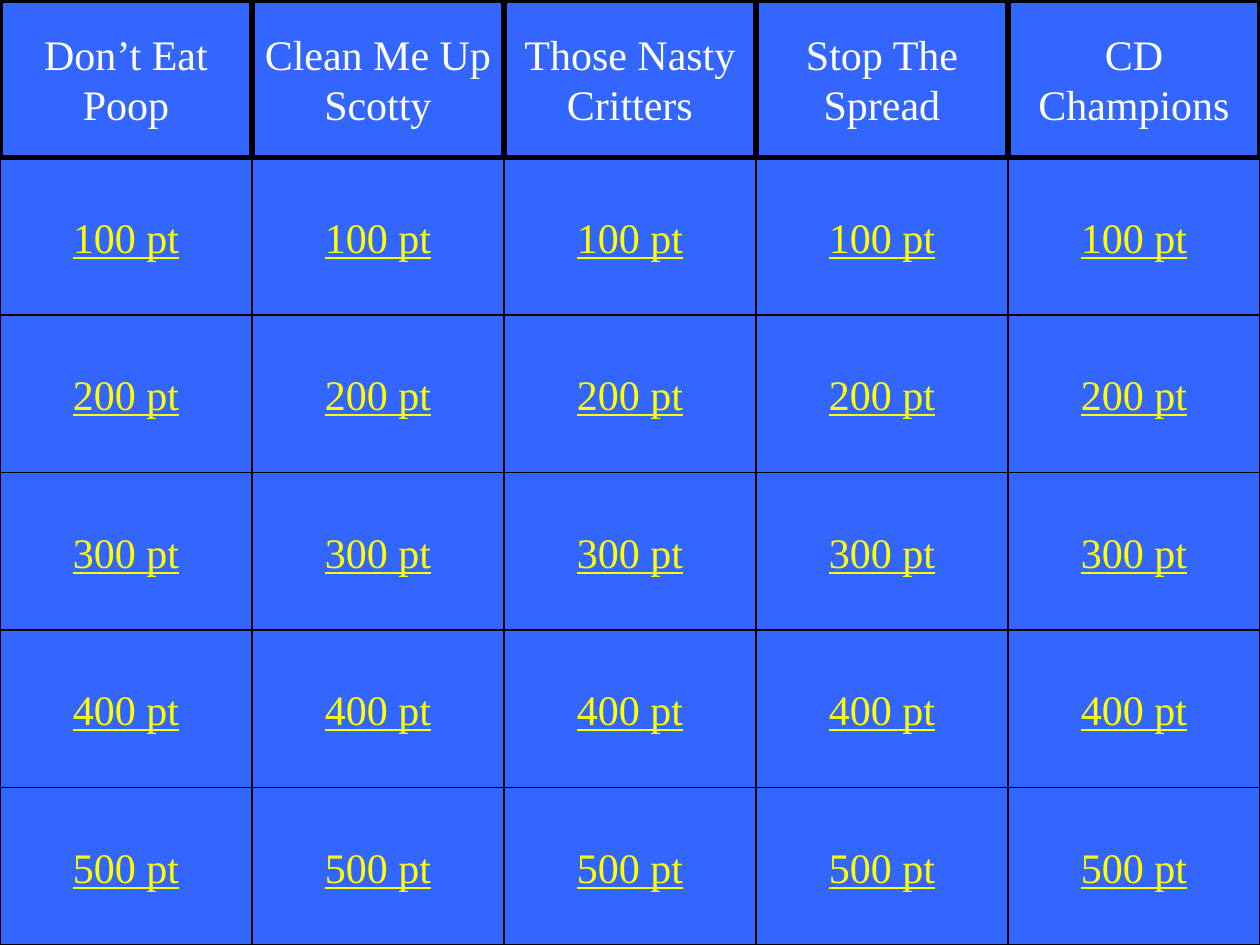
from itertools import product

from pptx import Presentation
from pptx.dml.color import RGBColor
from pptx.enum.shapes import MSO_SHAPE
from pptx.enum.text import MSO_ANCHOR, PP_ALIGN
from pptx.util import Inches, Pt

TOPICS = [
    "Don’t Eat Poop",
    "Clean Me Up Scotty",
    "Those Nasty Critters",
    "Stop The Spread",
    "CD Champions",
]
POINTS = [100, 200, 300, 400, 500]


def rgb(value):
    return RGBColor.from_string(value)


class Board:
    font = "Times New Roman"
    size = 24
    fill = "3366FF"
    border = "000000"
    topic_color = "FFFFFF"
    points_color = "FFFF00"

    def __init__(self, prs, cols, rows):
        self.slide = prs.slides.add_slide(prs.slide_layouts[6])
        self.col_width = prs.slide_width // cols
        self.row_height = prs.slide_height // rows

    def cell(self, kind, col, row, text, color, line_width):
        w, h = self.col_width, self.row_height
        sp = self.slide.shapes.add_shape(kind, col * w, row * h, w, h)
        sp.shadow.inherit = False
        sp.fill.solid()
        sp.fill.fore_color.rgb = rgb(self.fill)
        sp.line.color.rgb = rgb(self.border)
        sp.line.width = Pt(line_width)
        tf = sp.text_frame
        tf.text = text
        tf.vertical_anchor = MSO_ANCHOR.MIDDLE
        p = tf.paragraphs[0]
        p.alignment = PP_ALIGN.CENTER
        font = p.runs[0].font
        font.name = self.font
        font.size = Pt(self.size)
        font.color.rgb = rgb(color)
        return sp

    def topic(self, col, text):
        sp = self.cell(MSO_SHAPE.RECTANGLE, col, 0, text, self.topic_color, 3)
        sp.text_frame.word_wrap = True

    def button(self, col, row, points):
        sp = self.cell(MSO_SHAPE.ACTION_BUTTON_CUSTOM, col, row,
                       f"{points} pt", self.points_color, 0.75)
        sp.text_frame.word_wrap = False
        sp.text_frame.paragraphs[0].runs[0].font.underline = True


def main():
    prs = Presentation()
    prs.slide_width, prs.slide_height = Inches(10), Inches(7.5)
    board = Board(prs, len(TOPICS), len(POINTS) + 1)
    for col, (row, points) in product(range(len(TOPICS)), enumerate(POINTS, 1)):
        board.button(col, row, points)
    for col, text in enumerate(TOPICS):
        board.topic(col, text)
    prs.save("out.pptx")


if __name__ == "__main__":
    main()
